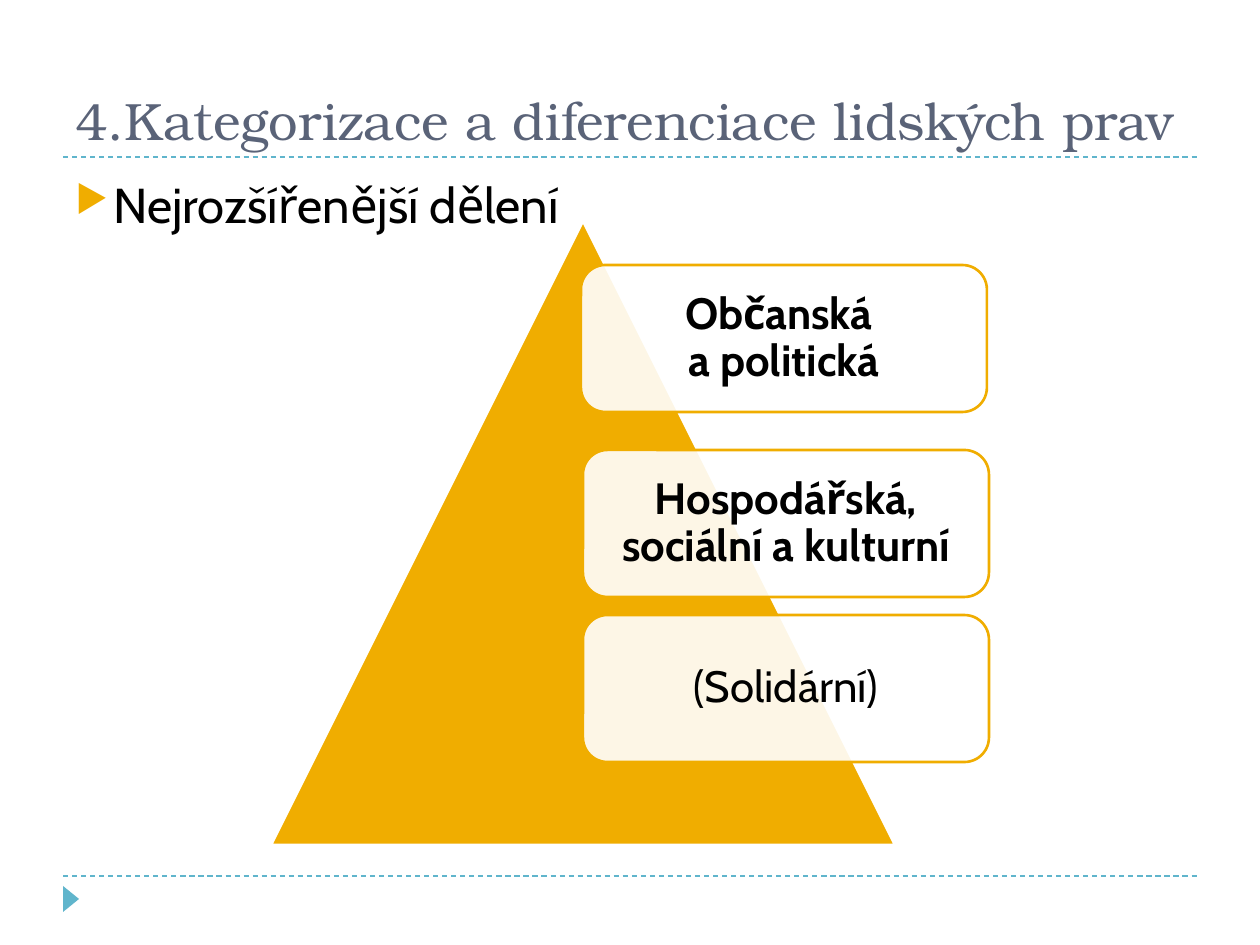
from dataclasses import dataclass

from lxml.etree import SubElement
from pptx import Presentation
from pptx.dml.color import RGBColor
from pptx.enum.dml import MSO_LINE
from pptx.enum.shapes import MSO_CONNECTOR, MSO_SHAPE
from pptx.enum.text import MSO_ANCHOR, PP_ALIGN
from pptx.oxml.ns import qn
from pptx.shapes.autoshape import Shape
from pptx.slide import Slide
from pptx.text.text import _Paragraph as Paragraph
from pptx.util import Emu, Pt

PX_PER_INCH = 126
WHITE = RGBColor(0xFF, 0xFF, 0xFF)
BLACK = RGBColor(0x00, 0x00, 0x00)
AMBER = RGBColor(0xF0, 0xAD, 0x00)
TEAL = RGBColor(0x60, 0xB5, 0xCC)
SLATE = RGBColor(0x5A, 0x63, 0x78)
HEADING_FONT = "TeX Gyre Bonum"
BODY_FONT = "Cabin"


@dataclass(frozen=True)
class Box:
    left: int
    top: int
    width: int
    height: int


@dataclass(frozen=True)
class Category:
    left: int
    top: int
    lines: tuple[str, ...]
    bold: bool = True


CATEGORIES = (
    Category(581, 265, ("Občanská ", "a politická")),
    Category(583, 450, ("Hospodářská, sociální a kulturní",)),
    Category(583, 615, ("(Solidární)",), bold=False),
)
CATEGORY_WIDTH, CATEGORY_HEIGHT = 406, 147
RULE_LEFT, RULE_RIGHT = 63, 1197
RULE_TOPS = (876, 157)


def px(value: int) -> Emu:
    return Emu(round(value * 914400 / PX_PER_INCH))


def bounds(box: Box) -> tuple[Emu, ...]:
    return px(box.left), px(box.top), px(box.width), px(box.height)


def add_run(paragraph: Paragraph, text: str, font_name: str, size: int,
            color: RGBColor, bold: bool = False) -> None:
    run = paragraph.add_run()
    run.text = text
    run.font.name = font_name
    run.font.size = Pt(size)
    run.font.color.rgb = color
    run.font.bold = bold


def add_rule(slide: Slide, top: int) -> None:
    rule = slide.shapes.add_connector(
        MSO_CONNECTOR.STRAIGHT, px(RULE_LEFT), px(top), px(RULE_RIGHT), px(top))
    rule.line.color.rgb = TEAL
    rule.line.width = Pt(0.75)
    rule.line.dash_style = MSO_LINE.DASH
    SubElement(rule._element.spPr, qn("a:effectLst"))


def add_filled_shape(slide: Slide, kind: MSO_SHAPE, box: Box, fill: RGBColor,
                     outline: RGBColor | None = None) -> Shape:
    shape = slide.shapes.add_shape(kind, *bounds(box))
    shape.shadow.inherit = False
    shape.fill.solid()
    shape.fill.fore_color.rgb = fill
    if outline is None:
        shape.line.fill.background()
    else:
        shape.line.color.rgb = outline
        shape.line.width = Pt(1.5)
    return shape


def add_text_box(slide: Slide, box: Box, anchor: MSO_ANCHOR) -> Paragraph:
    """Add a wrapping text box and return its first paragraph."""
    frame = slide.shapes.add_textbox(*bounds(box)).text_frame
    frame.word_wrap = True
    frame.vertical_anchor = anchor
    return frame.paragraphs[0]


def add_bullet(paragraph: Paragraph) -> None:
    properties = paragraph._p.get_or_add_pPr()
    indent = px(38)
    properties.set("marL", str(indent))
    properties.set("indent", str(-indent))
    color = SubElement(properties, qn("a:buClr"))
    SubElement(color, qn("a:srgbClr"), val=str(AMBER))
    SubElement(properties, qn("a:buSzPct"), val="76000")
    SubElement(properties, qn("a:buChar"), char="▶")


def add_category(slide: Slide, category: Category) -> None:
    box = Box(category.left, category.top, CATEGORY_WIDTH, CATEGORY_HEIGHT)
    shape = add_filled_shape(slide, MSO_SHAPE.ROUNDED_RECTANGLE, box, WHITE, AMBER)
    color = shape._element.spPr.find(qn("a:solidFill")).find(qn("a:srgbClr"))
    SubElement(color, qn("a:alpha"), val="90000")

    frame = shape.text_frame
    frame.word_wrap = True
    frame.vertical_anchor = MSO_ANCHOR.MIDDLE
    frame.margin_left = frame.margin_right = px(13)
    frame.margin_top = frame.margin_bottom = px(13)
    paragraph = frame.paragraphs[0]
    paragraph.alignment = PP_ALIGN.CENTER
    paragraph.line_spacing = 0.9
    for index, line in enumerate(category.lines):
        if index:
            paragraph.add_line_break()
        add_run(paragraph, line, BODY_FONT, 25, BLACK, category.bold)


def main() -> None:
    presentation = Presentation()
    presentation.slide_width = px(1260)
    presentation.slide_height = px(945)
    slide = presentation.slides.add_slide(presentation.slide_layouts[6])

    for top in RULE_TOPS:
        add_rule(slide, top)
    marker = add_filled_shape(
        slide, MSO_SHAPE.ISOSCELES_TRIANGLE, Box(58, 891, 26, 16), TEAL)
    marker.rotation = 90

    title = add_text_box(slide, Box(63, 21, 1134, 136), MSO_ANCHOR.BOTTOM)
    add_run(title, "4.Kategorizace a diferenciace lidských prav", HEADING_FONT, 30, SLATE)

    body = add_text_box(slide, Box(63, 168, 1134, 680), MSO_ANCHOR.TOP)
    add_bullet(body)
    add_run(body, "Nejrozšířenější dělení", BODY_FONT, 28, BLACK)

    add_filled_shape(
        slide, MSO_SHAPE.ISOSCELES_TRIANGLE, Box(271, 221, 624, 624), AMBER, WHITE)
    for category in CATEGORIES:
        add_category(slide, category)

    presentation.save("out.pptx")


if __name__ == "__main__":
    main()
